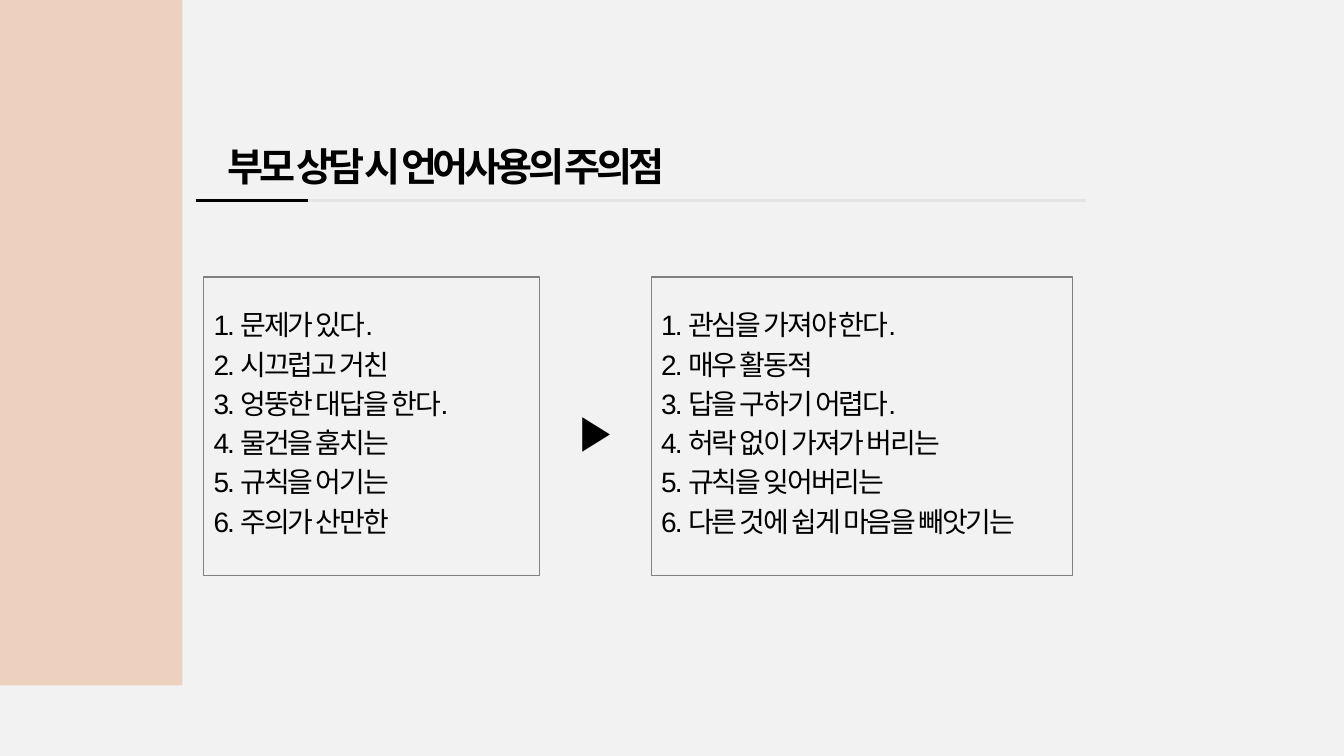
from dataclasses import dataclass

import lxml.etree
import pptx
import pptx.dml.color
import pptx.enum.shapes
import pptx.enum.text
import pptx.oxml.ns
import pptx.util

Inches = pptx.util.Inches
Pt = pptx.util.Pt
Align = pptx.enum.text.PP_ALIGN

COLORS = {
    "background": "F2F2F2",
    "band": "EDD0BE",
    "rule": "E5E5E5",
    "border": "808080",
    "ink": "000000",
}


@dataclass
class TextStyle:
    size: float
    bold: bool
    tracking: float
    alignment: Align
    top_inset: float
    line_pitch: float | None = None


@dataclass
class Panel:
    left: float
    width: float
    phrases: list[str]


@dataclass
class Label:
    left: float
    top: float
    width: float
    height: float
    text: str
    style: TextStyle


@dataclass
class Rule:
    end: float
    color: str


HEADING = TextStyle(28, True, -3, Align.CENTER, 0.05)
ARROW = TextStyle(34.1, True, -3, Align.CENTER, 0.27)
LIST = TextStyle(20, False, -1.5, Align.LEFT, 0.25, 28)

RULE_LEFT, RULE_TOP = 1.94, 1.99
PANEL_TOP, PANEL_HEIGHT = 2.75, 2.96

RULES = [Rule(10.77, "rule"), Rule(3.05, "ink")]
LABELS = [
    Label(1.53, 1.36, 5.79, 0.9, "부모 상담 시 언어사용의 주의점", HEADING),
    Label(5.42, 3.71, 0.97, 0.82, "▶", ARROW),
]
PANELS = [
    Panel(2.02, 3.33, [
        "문제가 있다.",
        "시끄럽고 거친",
        "엉뚱한 대답을 한다.",
        "물건을 훔치는",
        "규칙을 어기는",
        "주의가 산만한",
    ]),
    Panel(6.46, 4.18, [
        "관심을 가져야 한다.",
        "매우 활동적",
        "답을 구하기 어렵다.",
        "허락 없이 가져가 버리는",
        "규칙을 잊어버리는",
        "다른 것에 쉽게 마음을 빼앗기는",
    ]),
]


def color(name: str) -> pptx.dml.color.RGBColor:
    return pptx.dml.color.RGBColor.from_string(COLORS[name])


def apply_format(target: object, values: dict[str, object]) -> None:
    for name, value in values.items():
        setattr(target, name, value)


def write_text(shape, lines: list[str], style: TextStyle) -> None:
    frame = shape.text_frame
    apply_format(frame, {
        "word_wrap": True,
        "vertical_anchor": pptx.enum.text.MSO_ANCHOR.TOP,
        "margin_top": Inches(style.top_inset),
    })
    for index, line in enumerate(lines):
        paragraph = frame.paragraphs[0] if index == 0 else frame.add_paragraph()
        paragraph.alignment = style.alignment
        if style.line_pitch:
            paragraph.line_spacing = Pt(style.line_pitch)
        run = paragraph.add_run()
        run.text = line
        apply_format(run.font, {
            "name": "Arial",
            "size": Pt(style.size),
            "bold": style.bold,
        })
        run.font.color.rgb = color("ink")
    for properties in shape.element.iter(pptx.oxml.ns.qn("a:rPr")):
        properties.set("spc", str(round(style.tracking * 100)))


def add_rectangle(slide, left: float, top: float, width: float, height: float):
    shape = slide.shapes.add_shape(
        pptx.enum.shapes.MSO_SHAPE.RECTANGLE,
        Inches(left), Inches(top), Inches(width), Inches(height),
    )
    shape.shadow.inherit = False
    return shape


def add_band(slide) -> None:
    band = add_rectangle(slide, 0, -0.02, 1.81, 6.82)
    band.fill.solid()
    band.fill.fore_color.rgb = color("band")
    band.line.fill.background()


def add_rule(slide, rule: Rule) -> None:
    connector = slide.shapes.add_connector(
        pptx.enum.shapes.MSO_CONNECTOR.STRAIGHT,
        Inches(RULE_LEFT), Inches(RULE_TOP), Inches(rule.end), Inches(RULE_TOP),
    )
    connector.line.color.rgb = color(rule.color)
    connector.line.width = Pt(2)
    shape_properties = connector.element.find(pptx.oxml.ns.qn("p:spPr"))
    lxml.etree.SubElement(shape_properties, pptx.oxml.ns.qn("a:effectLst"))


def add_label(slide, label: Label) -> None:
    box = slide.shapes.add_textbox(
        Inches(label.left), Inches(label.top),
        Inches(label.width), Inches(label.height),
    )
    write_text(box, [label.text], label.style)


def add_panel(slide, panel: Panel) -> None:
    box = add_rectangle(slide, panel.left, PANEL_TOP, panel.width, PANEL_HEIGHT)
    box.fill.background()
    box.line.color.rgb = color("border")
    box.line.width = Pt(1)
    lines = [f"{number}. {phrase}" for number, phrase in enumerate(panel.phrases, 1)]
    write_text(box, lines, LIST)


def main() -> None:
    presentation = pptx.Presentation()
    apply_format(presentation, {
        "slide_width": Inches(13.33),
        "slide_height": Inches(7.5),
    })
    slide = presentation.slides.add_slide(presentation.slide_layouts[6])
    slide.background.fill.solid()
    slide.background.fill.fore_color.rgb = color("background")
    add_band(slide)
    for rule in RULES:
        add_rule(slide, rule)
    for panel in PANELS:
        add_panel(slide, panel)
    for label in LABELS:
        add_label(slide, label)
    presentation.save("out.pptx")


if __name__ == "__main__":
    main()
